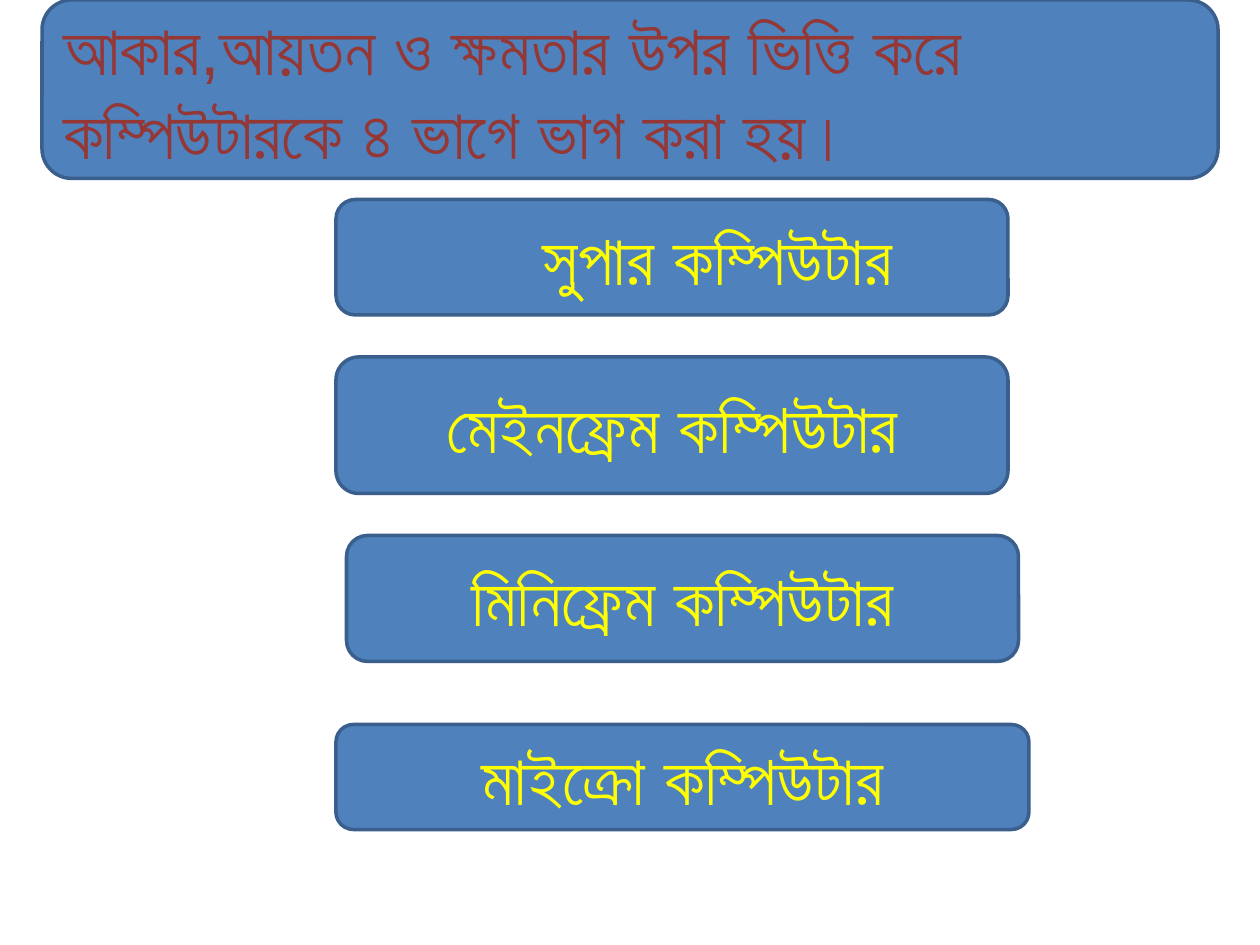
from dataclasses import dataclass

from lxml import etree
from pptx import Presentation
from pptx.dml.color import RGBColor
from pptx.enum.shapes import MSO_SHAPE
from pptx.enum.text import MSO_ANCHOR, PP_ALIGN
from pptx.oxml.ns import qn
from pptx.util import Pt

ROUNDED = MSO_SHAPE.ROUNDED_RECTANGLE
MIDDLE = MSO_ANCHOR.MIDDLE
LEFT, CENTER = PP_ALIGN.LEFT, PP_ALIGN.CENTER


@dataclass(frozen=True)
class Theme:
    fill: RGBColor = RGBColor(0x4F, 0x81, 0xBD)
    outline: RGBColor = RGBColor(0x3A, 0x5F, 0x8C)
    heading: RGBColor = RGBColor(0x95, 0x37, 0x35)
    label: RGBColor = RGBColor(0xFF, 0xFF, 0x00)
    font: str = "Arial"
    size: int = 40
    outline_width: int = 2


class SlideBuilder:
    """Draws the elements of one page in a shared theme."""

    def __init__(self, page, theme):
        self.page = page
        self.theme = theme

    def rounded_box(self, text, bounds, color, align=CENTER, level=0):
        theme = self.theme
        box = self.page.shapes.add_shape(ROUNDED, *map(Pt, bounds))
        box.shadow.inherit = False
        box.fill.solid()
        box.fill.fore_color.rgb = theme.fill
        box.line.color.rgb = theme.outline
        box.line.width = Pt(theme.outline_width)
        frame = box.text_frame
        frame.word_wrap = True
        frame.vertical_anchor = MIDDLE
        para = frame.paragraphs[0]
        para.text = text
        para.alignment = align
        para.level = level
        para.font.size = Pt(theme.size)
        para.font.color.rgb = color
        para.font.name = theme.font
        defaults = para._p.pPr.find(qn("a:defRPr"))
        etree.SubElement(defaults, qn("a:cs"), typeface=theme.font)

    def heading(self, text, bounds):
        self.rounded_box(text, bounds, self.theme.heading, LEFT)

    def computer_type(self, text, bounds, align=CENTER, level=0):
        self.rounded_box(text, bounds, self.theme.label, align, level)


def main():
    deck = Presentation()
    deck.slide_width, deck.slide_height = Pt(720), Pt(540)
    page = deck.slides.add_slide(deck.slide_layouts[6])
    builder = SlideBuilder(page, Theme())
    builder.heading(
        "আকার,আয়তন ও ক্ষমতার উপর ভিত্তি করে কম্পিউটারকে ৪ ভাগে ভাগ করা হয়।",
        (24, 0, 672, 102),
    )
    builder.computer_type("সুপার কম্পিউটার", (192, 114, 384, 66), LEFT, 3)
    for text, bounds in (
        ("মেইনফ্রেম কম্পিউটার", (192, 204, 384, 78)),
        ("মিনিফ্রেম কম্পিউটার", (198, 306, 384, 72)),
        ("মাইক্রো কম্পিউটার", (192, 414, 396, 60)),
    ):
        builder.computer_type(text, bounds)
    deck.save("out.pptx")


if __name__ == "__main__":
    main()
